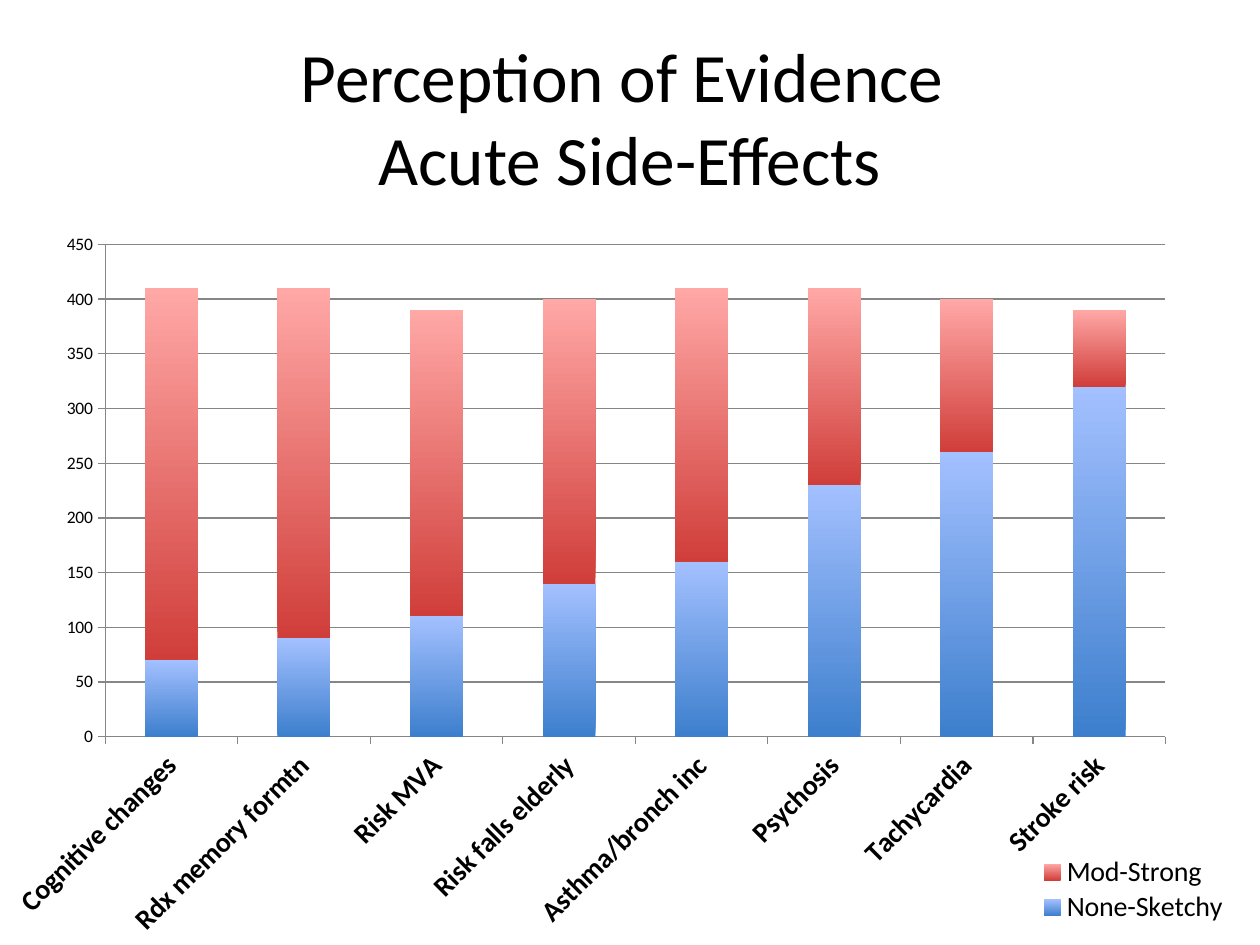
from lxml.etree import SubElement
from pptx import Presentation
from pptx.chart.data import CategoryChartData
from pptx.dml.color import RGBColor
from pptx.enum.chart import XL_CHART_TYPE, XL_LEGEND_POSITION, XL_TICK_MARK
from pptx.enum.text import MSO_ANCHOR, MSO_AUTO_SIZE, PP_ALIGN
from pptx.oxml.ns import qn
from pptx.util import Inches, Pt

WIDTH, HEIGHT = Inches(10), Inches(7.5)
FONT = "Calibri"
COLORS = {
    "text": "000000",
    "line": "868686",
    "None-Sketchy": ("3D7FCD", "A3C0FF"),
    "Mod-Strong": ("D03E3A", "FFA8A6"),
}
EVIDENCE = {
    "Cognitive changes": (70, 340),
    "Rdx memory formtn": (90, 320),
    "Risk MVA": (110, 280),
    "Risk falls elderly": (140, 260),
    "Asthma/bronch inc": (160, 250),
    "Psychosis": (230, 180),
    "Tachycardia": (260, 140),
    "Stroke risk": (320, 70),
}
SERIES = ("None-Sketchy", "Mod-Strong")


def apply_format(target, values):
    for name, value in values.items():
        setattr(target, name, value)


def format_font(font, size, bold=False):
    apply_format(font, {"name": FONT, "size": Pt(size), "bold": bold})
    font.color.rgb = RGBColor.from_string(COLORS["text"])


def place(shape, left, top, width, height):
    apply_format(shape, {
        "left": int(WIDTH * left), "top": int(HEIGHT * top),
        "width": int(WIDTH * width), "height": int(HEIGHT * height),
    })


def add_title(page, text):
    box = page.shapes.title
    place(box, 0.05, 0.04, 0.9, 1 / 6)
    frame = box.text_frame
    apply_format(frame, {
        "text": text, "word_wrap": True,
        "auto_size": MSO_AUTO_SIZE.NONE, "vertical_anchor": MSO_ANCHOR.MIDDLE,
    })
    para = frame.paragraphs[0]
    para.alignment = PP_ALIGN.CENTER
    for span in para.runs:
        format_font(span.font, 39.6)


def set_layout(parent, index, shares, inner=False):
    for old in parent.findall(qn("c:layout")):
        parent.remove(old)
    layout = SubElement(parent, qn("c:layout"))
    parent.insert(index, layout)
    manual = SubElement(layout, qn("c:manualLayout"))
    settings = {"layoutTarget": "inner"} if inner else {}
    settings.update(xMode="edge", yMode="edge")
    settings.update(zip("xywh", shares))
    for name, value in settings.items():
        SubElement(manual, qn(f"c:{name}")).set("val", str(value))


def format_line(line):
    line.color.rgb = RGBColor.from_string(COLORS["line"])
    line.width = Pt(0.75)


def format_axis(axis, size, bold=False):
    axis.major_tick_mark = XL_TICK_MARK.OUTSIDE
    format_font(axis.tick_labels.font, size, bold)
    format_line(axis.format.line)


def fill_series(series):
    fill = series.format.fill
    fill.gradient()
    fill.gradient_angle = 90
    for stop, color, position in zip(fill.gradient_stops, COLORS[series.name], (0, 1)):
        stop.color.rgb = RGBColor.from_string(color)
        stop.position = position


def add_evidence_chart(page):
    data = CategoryChartData()
    data.categories = list(EVIDENCE)
    for name, values in zip(SERIES, zip(*EVIDENCE.values())):
        data.add_series(name, values)
    frame = page.shapes.add_chart(XL_CHART_TYPE.COLUMN_STACKED, 0, 0, WIDTH, HEIGHT, data)
    place(frame, 0, 0.235, 0.982, 0.765)
    chart = frame.chart
    chart.has_title = False
    format_font(chart.font, 10)

    plot = chart.plots[0]
    apply_format(plot, {"gap_width": 150, "overlap": 100, "vary_by_categories": False})
    for series in plot.series:
        fill_series(series)

    format_axis(chart.category_axis, 16, bold=True)
    labels = chart.category_axis._element.find(qn("c:txPr"))
    labels.find(qn("a:bodyPr")).set("rot", "-2700000")
    scale = chart.value_axis
    format_axis(scale, 10)
    apply_format(scale, {
        "minimum_scale": 0, "maximum_scale": 450, "major_unit": 50,
        "has_major_gridlines": True,
    })
    format_line(scale.major_gridlines.format.line)

    chart.has_legend = True
    legend = chart.legend
    apply_format(legend, {"position": XL_LEGEND_POSITION.RIGHT, "include_in_layout": False})
    format_font(legend.font, 16)
    set_layout(legend._element, 1, (0.836, 0.874, 0.16, 0.1))
    set_layout(chart._chartSpace.chart.plotArea, 0, (0.085, 0.031, 0.857, 0.681), inner=True)


def main():
    deck = Presentation()
    apply_format(deck, {"slide_width": WIDTH, "slide_height": HEIGHT})
    page = deck.slides.add_slide(deck.slide_layouts[5])
    add_title(page, "Perception of Evidence \vAcute Side-Effects")
    add_evidence_chart(page)
    deck.save("out.pptx")


if __name__ == "__main__":
    main()
